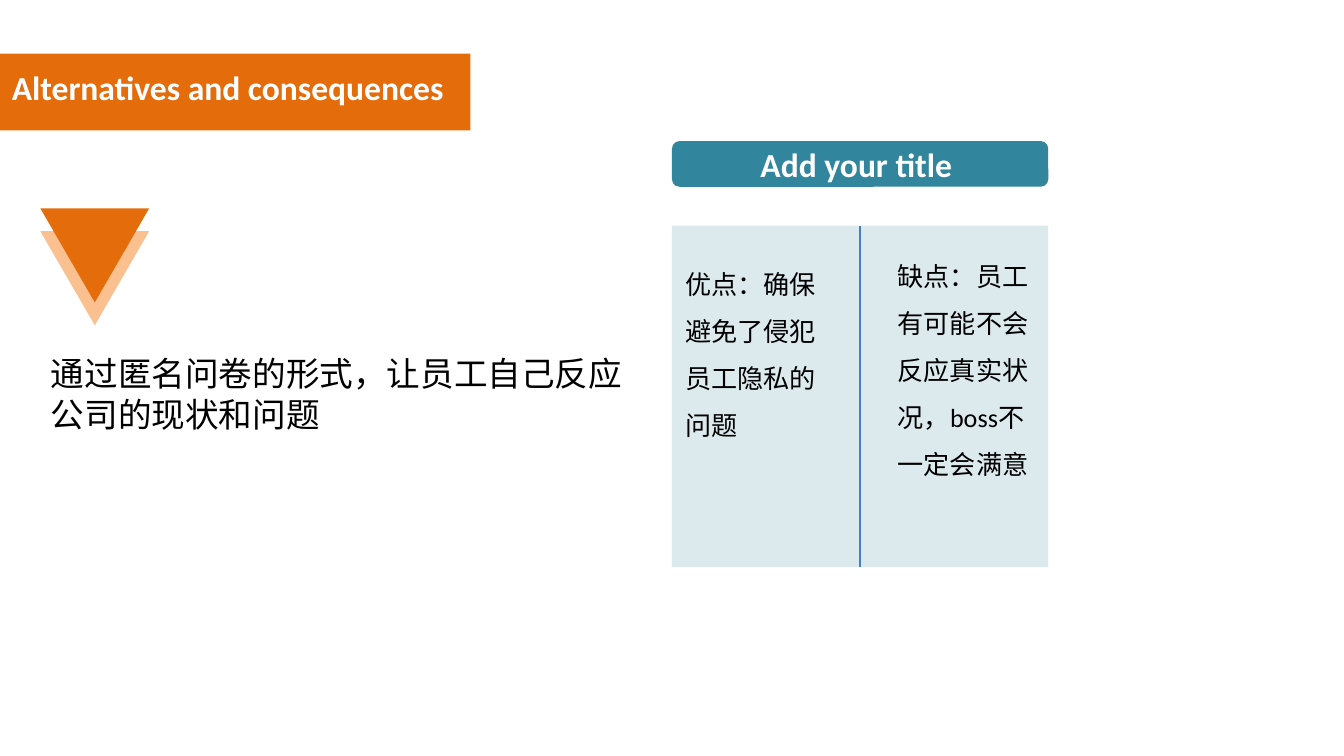
from dataclasses import dataclass

from lxml import etree
from pptx import Presentation
from pptx import util as u
from pptx.dml.color import RGBColor
from pptx.enum import shapes, text
from pptx.oxml import ns


@dataclass(frozen=True)
class Theme:
    """Colours, font and type sizes of the slide."""
    orange: str = "E46C0A"
    peach: str = "FAC090"
    teal: str = "31859C"
    blue: str = "4B7EBC"
    white: str = "FFFFFF"
    black: str = "000000"
    font: str = "Calibri"
    heading: int = 18
    body: int = 14


THEME = Theme()


def add_block(slide, kind, box, color, opacity=100):
    """Add a flat filled shape without outline or shadow."""
    block = slide.shapes.add_shape(kind, *map(u.Inches, box))
    block.shadow.inherit = False
    block.line.fill.background()
    block.fill.solid()
    block.fill.fore_color.rgb = RGBColor.from_string(color)
    if opacity < 100:
        tint = block._element.spPr.find(".//" + ns.qn("a:srgbClr"))
        etree.SubElement(tint, ns.qn("a:alpha"), val=str(opacity * 1000))
    return block


def write(frame, lines, size, color, bold=False, spacing=None, align=None):
    """Write one paragraph per line in a single style."""
    frame.text = "\n".join(lines)
    for paragraph in frame.paragraphs:
        paragraph.line_spacing = spacing
        paragraph.alignment = align
        paragraph.font.name = THEME.font
        paragraph.font.size = u.Pt(size)
        paragraph.font.bold = bold
        paragraph.font.color.rgb = RGBColor.from_string(color)


def add_label(slide, box, lines, size, color, wrap=True, **style):
    """Add a text box that grows with its text."""
    frame = slide.shapes.add_textbox(*map(u.Inches, box)).text_frame
    frame.word_wrap = wrap
    frame.auto_size = text.MSO_AUTO_SIZE.SHAPE_TO_FIT_TEXT
    write(frame, lines, size, color, **style)


def add_banner(slide, left, top, width, height, heading):
    """Draw the slide heading on its orange band."""
    add_block(slide, shapes.MSO_SHAPE.RECTANGLE, (left, top, width, height), THEME.orange)
    add_label(slide, (left - 0.01, top + 0.05, width, 0.4), [heading],
              THEME.heading, THEME.white, bold=True)


def add_proposal(slide, left, top, width, height, lines):
    """Draw the double arrowhead with the proposal below it."""
    for drop, color in ((0.17, THEME.peach), (0, THEME.orange)):
        marker = add_block(slide, shapes.MSO_SHAPE.ISOSCELES_TRIANGLE,
                           (left + 0.02, top + drop, 0.81, 0.7), color)
        marker.rotation = 180
    add_label(slide, (left, top + 1.03, width, height - 1.03), lines,
              THEME.heading, THEME.black, wrap=False)


def add_comparison(slide, left, top, width, height, title, pros, cons):
    """Draw the titled panel that sets pros beside cons."""
    panel_top, bottom, middle = top + 0.63, top + height, left + width / 2
    add_block(slide, shapes.MSO_SHAPE.RECTANGLE,
              (left, panel_top, width, bottom - panel_top), THEME.teal, opacity=17)

    header = add_block(slide, shapes.MSO_SHAPE.ROUNDED_RECTANGLE,
                       (left, top, width, 0.34), THEME.teal)
    frame = header.text_frame
    frame.margin_left = frame.margin_right = frame.margin_top = frame.margin_bottom = 0
    frame.vertical_anchor = text.MSO_ANCHOR.MIDDLE
    write(frame, [title], THEME.heading, THEME.white, bold=True, align=text.PP_ALIGN.CENTER)

    for x, y, h, argument in ((left, 0.15, 1.51, pros), (middle + 0.18, 0.09, 1.87, cons)):
        add_label(slide, (x, panel_top + y, 1.18, h), [argument],
                  THEME.body, THEME.black, spacing=1.5)

    divider = slide.shapes.add_connector(
        shapes.MSO_CONNECTOR.STRAIGHT, *map(u.Inches, (middle, panel_top, middle, bottom)))
    divider.line.color.rgb = RGBColor.from_string(THEME.blue)
    divider.line.width = u.Pt(0.75)
    etree.SubElement(divider._element.spPr, ns.qn("a:effectLst"))


def main():
    """Build and save the slide."""
    deck = Presentation()
    deck.slide_width = u.Inches(10)
    deck.slide_height = deck.slide_width * 9 // 16
    slide = deck.slides.add_slide(deck.slide_layouts[6])
    add_banner(slide, 0, 0.4, 3.5, 0.57, "Alternatives and consequences")
    add_comparison(slide, 5, 1.05, 2.8, 3.17, "Add your title ",
                   "优点：确保避免了侵犯员工隐私的问题",
                   "缺点：员工有可能不会反应真实状况，boss不一定会满意")
    add_proposal(slide, 0.28, 1.55, 4.49, 1.74,
                 ["通过匿名问卷的形式，让员工自己反应", "公司的现状和问题"])
    deck.save("out.pptx")


if __name__ == "__main__":
    main()
